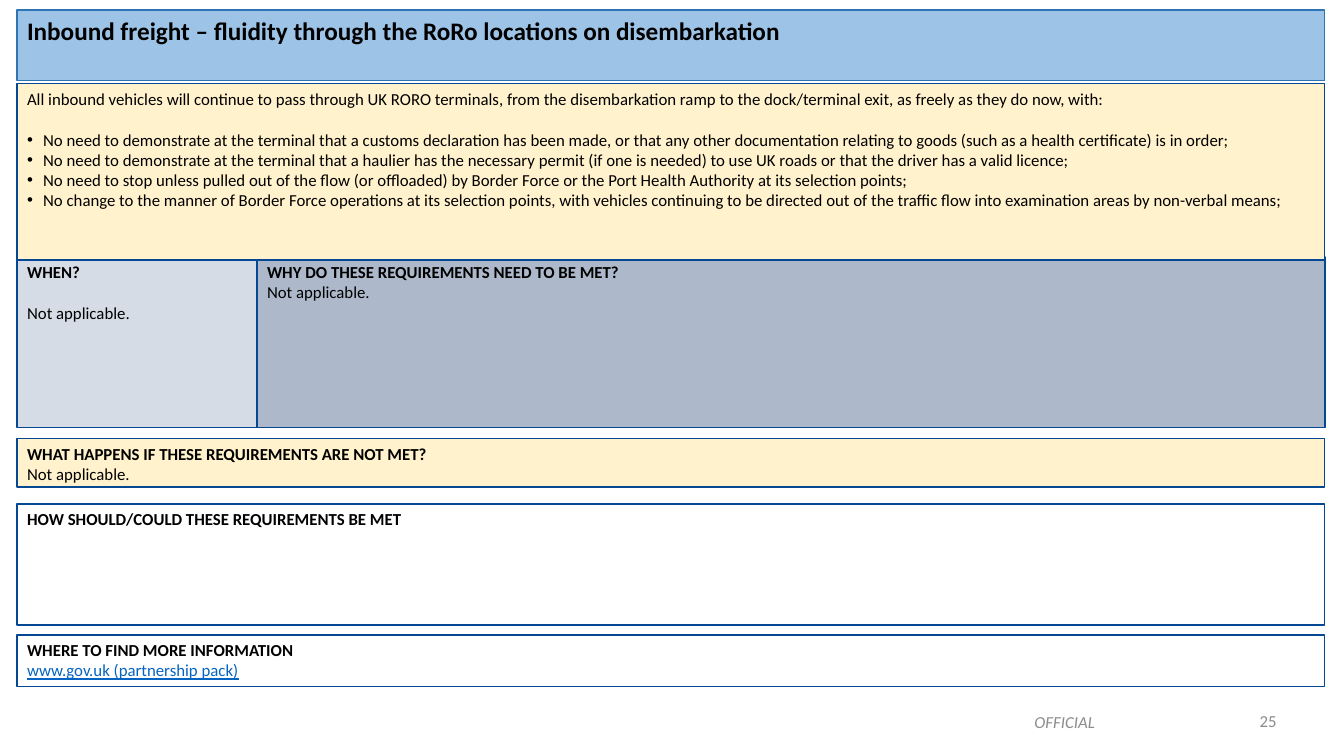
from lxml.etree import SubElement
from pptx import Presentation
from pptx.dml.color import RGBColor
from pptx.enum.shapes import MSO_SHAPE as Shape
from pptx.enum.text import MSO_ANCHOR as Anchor, PP_ALIGN as Align
from pptx.oxml.ns import qn
from pptx.util import Inches, Pt

THEME = {
    "font": "Calibri", "title_size": 18, "body_size": 12,
    "text": "000000", "link": "0563C1", "muted": "8C8C8C",
    "title_fill": "9DC3E6", "title_line": "2E75B6", "line": "044894",
    "cream": "FFF2CC", "pale": "D6DCE5", "slate": "ADB9CA", "white": "FFFFFF",
}
LEFT, WIDTH, WHEN_WIDTH = 0.17, 12.97, 2.38
WHY_LEFT, WHY_WIDTH = LEFT + WHEN_WIDTH, WIDTH - WHEN_WIDTH
BLANK_LINE = Pt(14.6)
BULLET_INDENT = Inches(0.16)


def color(key):
    return RGBColor.from_string(THEME[key])


def write(frame, lines, size="body_size", ink="text", align=Align.LEFT):
    """Fill a text frame with one paragraph per line and return the paragraphs."""
    frame.word_wrap = True
    paragraphs = []
    for index, line in enumerate(lines):
        paragraph = frame.add_paragraph() if index else frame.paragraphs[0]
        paragraph.text = line
        paragraph.alignment = align
        paragraph.font.name = THEME["font"]
        paragraph.font.size = Pt(THEME[size])
        paragraph.font.color.rgb = color(ink)
        paragraphs.append(paragraph)
    return paragraphs


prs = Presentation()
prs.slide_width, prs.slide_height = Inches(13.33), Inches(7.5)
slide = prs.slides.add_slide(prs.slide_layouts[6])

# Panels: left, top, width, height, fill, line, heading, text below
panels = {
    "title": (LEFT, 0.1, WIDTH, 0.7, "title_fill", "title_line",
              "Inbound freight – fluidity through the RoRo locations on disembarkation", []),
    "how": (LEFT, 5, WIDTH, 1.2, "white", "line",
            "HOW SHOULD/COULD THESE REQUIREMENTS BE MET", []),
    "what": (LEFT, 4.35, WIDTH, 0.48, "cream", "line",
             "WHAT HAPPENS IF THESE REQUIREMENTS ARE NOT MET?", ["Not applicable."]),
    "when": (LEFT, 2.55, WHEN_WIDTH, 1.69, "pale", "line", "WHEN?", ["Not applicable."]),
    "why": (WHY_LEFT, 2.55, WHY_WIDTH, 1.69, "slate", "line",
            "WHY DO THESE REQUIREMENTS NEED TO BE MET?", ["Not applicable."]),
    "where": (LEFT, 6.3, WIDTH, 0.51, "white", "line",
              "WHERE TO FIND MORE INFORMATION", ["www.gov.uk (partnership pack)"]),
    "statement": (LEFT, 0.83, WIDTH, 1.75, "cream", "line",
                  "All inbound vehicles will continue to pass through UK RORO terminals, from the "
                  "disembarkation ramp to the dock/terminal exit, as freely as they do now, with:",
                  ["No need to demonstrate at the terminal that a customs declaration has been made, or that "
                   "any other documentation relating to goods (such as a health certificate) is in order;",
                   "No need to demonstrate at the terminal that a haulier has the necessary permit "
                   "(if one is needed) to use UK roads or that the driver has a valid licence;",
                   "No need to stop unless pulled out of the flow (or offloaded) by Border Force or the "
                   "Port Health Authority at its selection points;",
                   "No change to the manner of Border Force operations at its selection points, with vehicles "
                   "continuing to be directed out of the traffic flow into examination areas by "
                   "non-verbal means;"]),
}

written = {}
for part, (left, top, width, height, fill, line, heading, body) in panels.items():
    panel = slide.shapes.add_shape(Shape.RECTANGLE, *map(Inches, (left, top, width, height)))
    panel.shadow.inherit = False
    panel.fill.solid()
    panel.fill.fore_color.rgb = color(fill)
    panel.line.color.rgb = color(line)
    panel.line.width = Pt(1)
    panel.text_frame.vertical_anchor = Anchor.TOP
    size = "title_size" if part == "title" else "body_size"
    written[part] = write(panel.text_frame, [heading, *body], size)
    written[part][0].font.bold = part != "statement"

for part in ("when", "statement"):
    written[part][1].space_before = BLANK_LINE

web_address = written["where"][1]
web_address.font.color.rgb = color("link")
web_address.font.underline = True

for requirement in written["statement"][1:]:
    properties = requirement._p.get_or_add_pPr()
    properties.set("marL", str(BULLET_INDENT))
    properties.set("indent", str(-BULLET_INDENT))
    SubElement(properties, qn("a:buFont"), typeface="Arial")
    # The bullet must precede the default run properties
    SubElement(properties, qn("a:buChar"), char="•")
    defaults = properties.find(qn("a:defRPr"))
    if defaults is not None:
        properties.append(defaults)

# Footer: left, top, width, text, alignment, italic
footer = [
    (12.1, 6.95, 0.66, "25", Align.RIGHT, False),
    (8.31, 6.96, 4.5, "OFFICIAL", Align.CENTER, True),
]
for left, top, width, label, align, italic in footer:
    box = slide.shapes.add_textbox(*map(Inches, (left, top, width, 0.4)))
    box.text_frame.vertical_anchor = Anchor.MIDDLE
    write(box.text_frame, [label], ink="muted", align=align)[0].font.italic = italic

prs.save("out.pptx")
